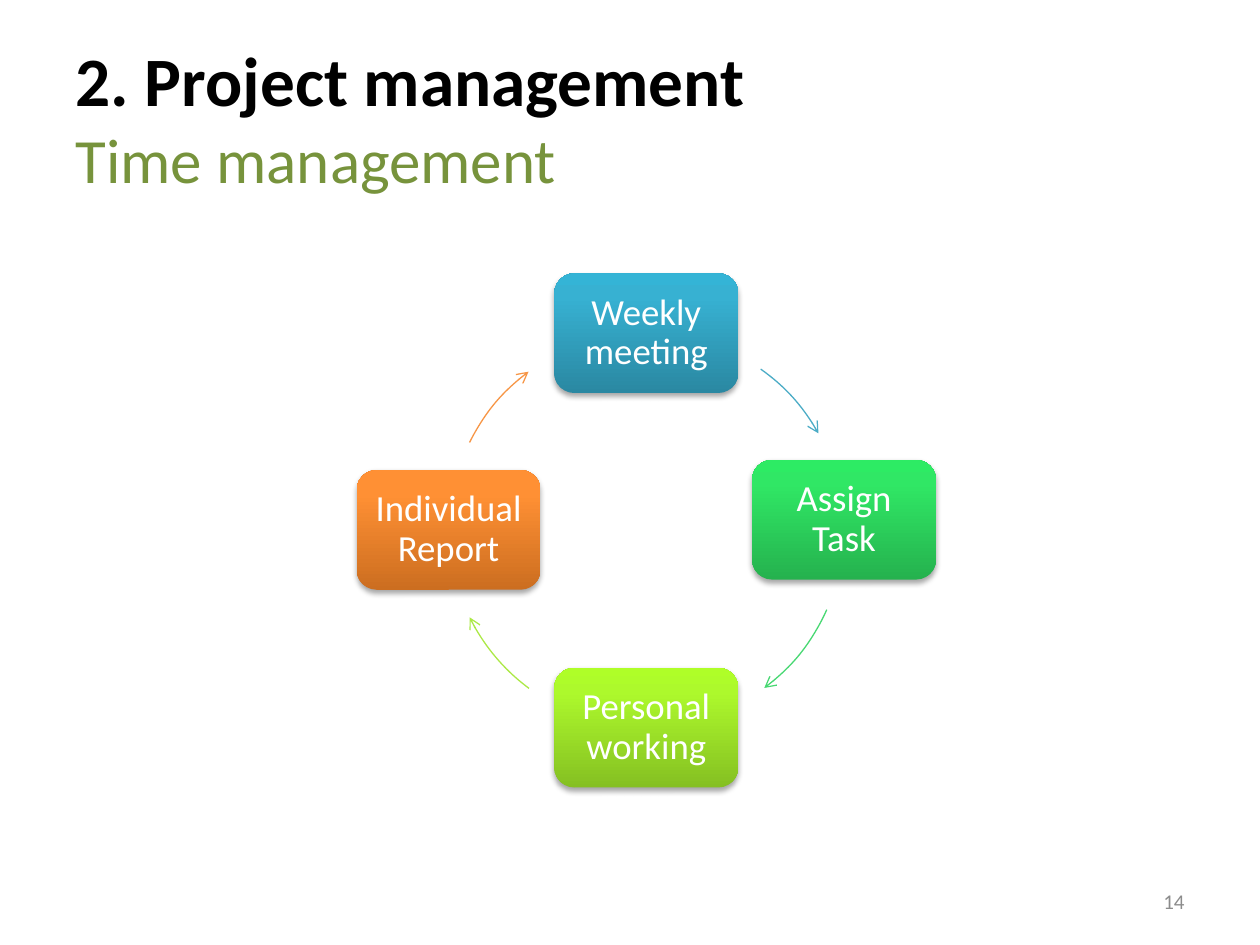
"""Build the time management slide with its four-step weekly cycle."""
import copy
from dataclasses import dataclass

import lxml.etree
import pptx
import pptx.dml.color
import pptx.enum.shapes
import pptx.enum.text
import pptx.oxml.ns
import pptx.slide
import pptx.text.text
import pptx.util

Pt = pptx.util.Pt
qn = pptx.oxml.ns.qn
Align = pptx.enum.text.PP_ALIGN
Anchor = pptx.enum.text.MSO_ANCHOR
Shape = pptx.enum.shapes.MSO_SHAPE

FONT = "Calibri"
COLORS = {
    "title": "000000",
    "subtitle": "77933C",
    "step text": "FFFFFF",
    "number": "8C8C8C",
    "shadow": "000000",
}
BOX_WIDTH, BOX_HEIGHT = 105.1, 68.4
CENTER_X, CENTER_Y, RADIUS = 369.4, 302.8, 112.7


@dataclass(frozen=True)
class Step:
    """A box of the cycle and the arc that leaves it, angles clockwise from the right."""

    label: str
    left: float
    top: float
    gradient: tuple[str, str, str]
    arc_color: str
    arc_start: float
    arc_end: float


STEPS = (
    Step("Weekly meeting", 316.8, 156.2, ("2A88A2", "37B1D2", "34B4D6"), "4BACC6", 305.4, 330.7),
    Step("Assign Task", 429.8, 262.8, ("25B24E", "30E765", "2DEB64"), "47D872", 23.9, 53.3),
    Step("Personal working", 316.8, 381.6, ("85C022", "ADF92C", "AFFE28"), "ACE946", 126.5, 153.7),
    Step("Individual Report", 203.8, 268.6, ("CC6E20", "FF9034", "FF9136"), "F79646", 206.3, 233.3),
)


def rgb(value: str) -> pptx.dml.color.RGBColor:
    """Turn a hex string into a colour."""
    return pptx.dml.color.RGBColor.from_string(value)


def style_font(font: pptx.text.text.Font, size: float, color: str, bold: bool = False) -> None:
    """Set the face, size, weight and colour of a font."""
    font.name, font.size, font.bold = FONT, Pt(size), bold
    font.color.rgb = rgb(color)


def add_title(slide: pptx.slide.Slide) -> None:
    """Fill the title placeholder with the heading and its subtitle."""
    title = slide.shapes.title
    title.left, title.top, title.width, title.height = Pt(36), Pt(21.6), Pt(648), Pt(90)
    frame = title.text_frame
    frame.auto_size = pptx.enum.text.MSO_AUTO_SIZE.NONE
    frame.vertical_anchor = Anchor.MIDDLE
    paragraph = frame.paragraphs[0]
    paragraph.alignment = Align.LEFT
    heading = paragraph.add_run()
    heading.text = "2. Project management"
    style_font(heading.font, 39.6, COLORS["title"], bold=True)
    paragraph.add_line_break()
    subtitle = paragraph.add_run()
    subtitle.text = "Time management"
    style_font(subtitle.font, 36, COLORS["subtitle"])


def add_box(slide: pptx.slide.Slide, step: Step) -> None:
    """Draw the shaded rounded box of a step."""
    box = slide.shapes.add_shape(
        Shape.ROUNDED_RECTANGLE, Pt(step.left), Pt(step.top), Pt(BOX_WIDTH), Pt(BOX_HEIGHT)
    )
    box.line.fill.background()
    box.fill.gradient()
    box.fill.gradient_angle = 90
    stop_list = box.element.xpath(".//a:gsLst")[0]
    stop_list.append(copy.deepcopy(stop_list[0]))
    for stop, position, color in zip(box.fill.gradient_stops, (0, 0.8, 1), step.gradient):
        stop.position = position
        stop.color.rgb = rgb(color)

    box.shadow.inherit = False
    effects = box.element.spPr.find(qn("a:effectLst"))
    shadow = lxml.etree.SubElement(
        effects, qn("a:outerShdw"), blurRad=str(Pt(3.1)), dist=str(Pt(1.8)), dir="5400000", rotWithShape="0"
    )
    shadow_color = lxml.etree.SubElement(shadow, qn("a:srgbClr"), val=COLORS["shadow"])
    lxml.etree.SubElement(shadow_color, qn("a:alpha"), val="35000")

    frame = box.text_frame
    frame.word_wrap = True
    frame.vertical_anchor = Anchor.MIDDLE
    frame.margin_left = frame.margin_right = frame.margin_top = frame.margin_bottom = Pt(3.2)
    paragraph = frame.paragraphs[0]
    paragraph.text = step.label
    paragraph.alignment = Align.CENTER
    paragraph.line_spacing = 0.9
    style_font(paragraph.font, 21, COLORS["step text"])


def add_arc(slide: pptx.slide.Slide, step: Step) -> None:
    """Draw the curved arrow from a step to the next one."""
    arc = slide.shapes.add_shape(
        Shape.ARC, Pt(CENTER_X - RADIUS), Pt(CENTER_Y - RADIUS), Pt(2 * RADIUS), Pt(2 * RADIUS)
    )
    arc.adjustments[0] = step.arc_start * 0.6
    arc.adjustments[1] = step.arc_end * 0.6
    arc.fill.background()
    arc.line.color.rgb = rgb(step.arc_color)
    arc.line.width = Pt(0.75)
    arc.shadow.inherit = False
    lxml.etree.SubElement(arc.element.spPr.find(qn("a:ln")), qn("a:tailEnd"), type="arrow")


def add_slide_number(slide: pptx.slide.Slide, number: str) -> None:
    """Write the slide number at the lower right."""
    frame = slide.shapes.add_textbox(Pt(516), Pt(500.4), Pt(168), Pt(28.8)).text_frame
    frame.word_wrap = True
    frame.vertical_anchor = Anchor.MIDDLE
    paragraph = frame.paragraphs[0]
    paragraph.text = number
    paragraph.alignment = Align.RIGHT
    style_font(paragraph.font, 12, COLORS["number"])


def main() -> None:
    """Build and save the presentation."""
    presentation = pptx.Presentation()
    presentation.slide_width, presentation.slide_height = Pt(720), Pt(540)
    slide = presentation.slides.add_slide(presentation.slide_layouts[5])
    add_title(slide)
    add_slide_number(slide, "14")
    for step in STEPS:
        add_box(slide, step)
        add_arc(slide, step)
    presentation.save("out.pptx")


if __name__ == "__main__":
    main()
